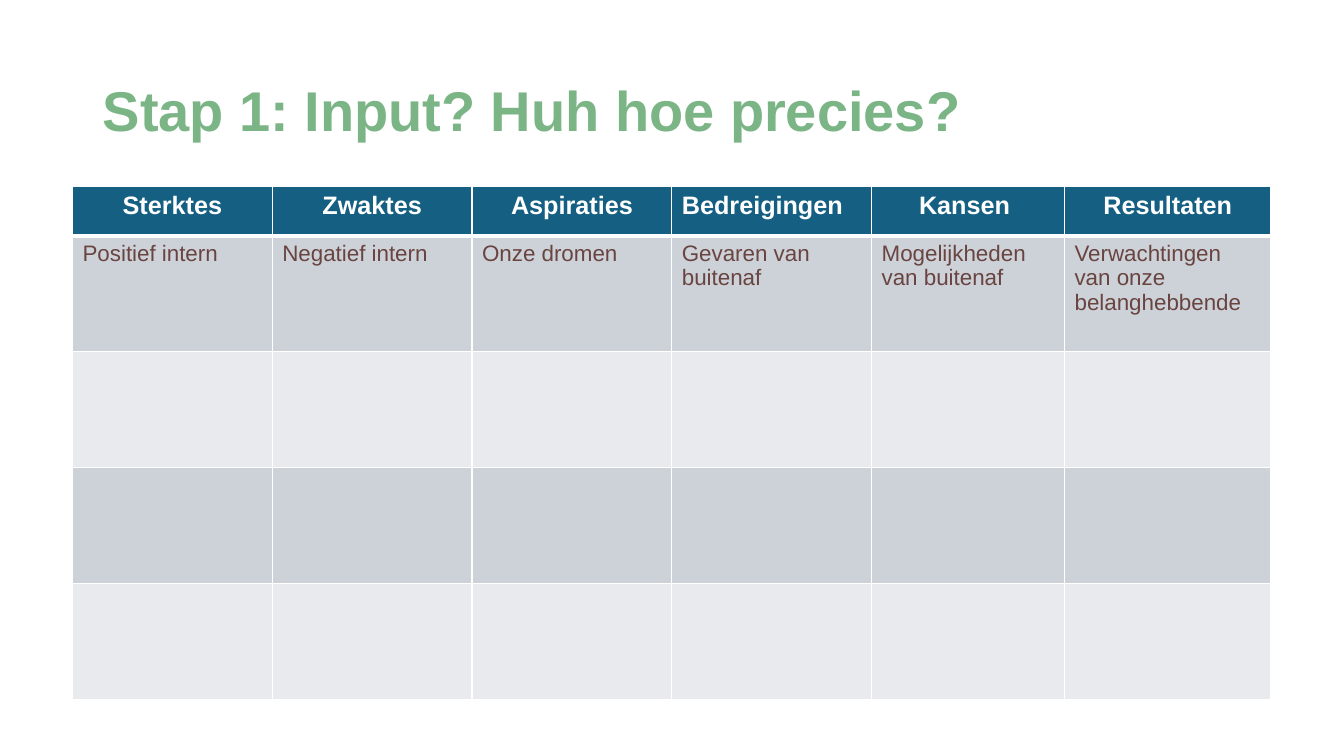
from lxml import etree
from pptx import Presentation
from pptx.dml.color import RGBColor
from pptx.enum.text import MSO_ANCHOR, MSO_AUTO_SIZE, PP_ALIGN
from pptx.oxml.ns import qn
from pptx.util import Pt

LEFT, CENTER = PP_ALIGN.LEFT, PP_ALIGN.CENTER
MIDDLE = MSO_ANCHOR.MIDDLE
NO_FIT = MSO_AUTO_SIZE.NONE
TITLE_ONLY = 5

COLORS = {
    "title": "7BB586",
    "header": "156082",
    "band_dark": "CCD2D8",
    "band_light": "E8EAED",
    "text": "6A4441",
    "white": "FFFFFF",
}

COLUMNS = [
    ("Sterktes", CENTER, ["Positief intern"], 142.7),
    ("Zwaktes", CENTER, ["Negatief intern"], 142.7),
    ("Aspiraties", CENTER, ["Onze dromen"], 142.7),
    ("Bedreigingen ", LEFT, ["Gevaren van buitenaf "], 142.7),
    ("Kansen ", CENTER, ["Mogelijkheden van buitenaf"], 137.8),
    ("Resultaten", CENTER, ["Verwachtingen van onze", "belanghebbende"], 147.5),
]
HEADER_HEIGHT = 35.3
BAND_HEIGHT = 82.8
BAND_COUNT = 4


class SlideBuilder:
    font = "Arial"

    def __init__(self, prs):
        self.s = prs.slides.add_slide(prs.slide_layouts[TITLE_ONLY])

    def add_text(self, tf, lines, size, color, bold=False, align=LEFT):
        for i, line in enumerate(lines):
            p = tf.add_paragraph() if i else tf.paragraphs[0]
            p.alignment = align
            r = p.add_run()
            r.text = line
            r.font.name = self.font
            r.font.size = Pt(size)
            r.font.bold = bold
            r.font.color.rgb = RGBColor.from_string(COLORS[color])

    def title(self, text, left, top, width, height):
        sp = self.s.shapes.title
        sp.left, sp.top, sp.width, sp.height = map(Pt, (left, top, width, height))
        tf = sp.text_frame
        tf.word_wrap = True
        tf.auto_size = NO_FIT
        tf.vertical_anchor = MIDDLE
        self.add_text(tf, [text], 40, "title", bold=True)
        tf.paragraphs[0].line_spacing = 0.9

    def border(self, cell, bottom=1):
        tc_pr = cell._tc.get_or_add_tcPr()
        widths = {"a:lnL": 1, "a:lnR": 1, "a:lnT": 1, "a:lnB": bottom}
        for tag, width in widths.items():
            ln = etree.SubElement(tc_pr, qn(tag), w=str(Pt(width)))
            fill = etree.SubElement(ln, qn("a:solidFill"))
            etree.SubElement(fill, qn("a:srgbClr"), val=COLORS["white"])

    def fill(self, cell, color):
        cell.fill.solid()
        cell.fill.fore_color.rgb = RGBColor.from_string(COLORS[color])

    def table(self, left, top):
        width = sum(column[-1] for column in COLUMNS)
        height = HEADER_HEIGHT + BAND_COUNT * BAND_HEIGHT
        table = self.s.shapes.add_table(
            BAND_COUNT + 1, len(COLUMNS), Pt(left), Pt(top), Pt(width), Pt(height)
        ).table
        for i, row in enumerate(table.rows):
            row.height = Pt(BAND_HEIGHT if i else HEADER_HEIGHT)
        for j, (heading, align, lines, col_width) in enumerate(COLUMNS):
            table.columns[j].width = Pt(col_width)
            header = table.cell(0, j)
            self.add_text(header.text_frame, [heading], 18, "white", True, align)
            self.border(header, bottom=3)
            self.fill(header, "header")
            self.add_text(table.cell(1, j).text_frame, lines, 16, "text")
            for i in range(1, BAND_COUNT + 1):
                self.fill(table.cell(i, j), "band_dark" if i % 2 else "band_light")


def main():
    prs = Presentation()
    prs.slide_width, prs.slide_height = Pt(960), Pt(540)
    slide = SlideBuilder(prs)
    slide.title("Stap 1: Input? Huh hoe precies?", 66.2, 28.8, 828, 104.4)
    slide.table(51.8, 133.2)
    prs.save("out.pptx")


if __name__ == "__main__":
    main()
